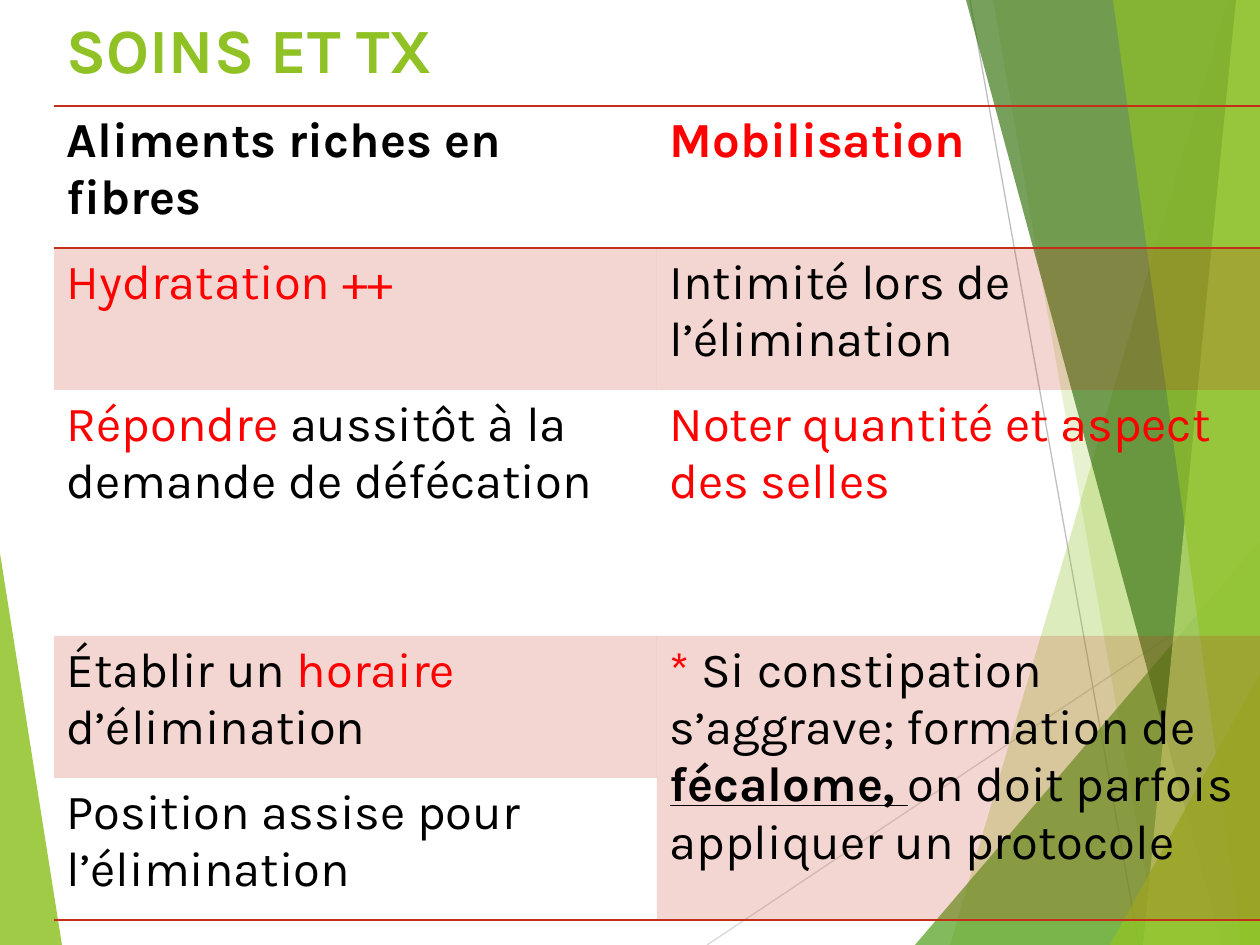
"""Build the constipation care slide: a title and a table over green facets."""
from pptx import Presentation
from pptx.dml.color import RGBColor
from pptx.enum.shapes import MSO_CONNECTOR
from pptx.enum.text import MSO_ANCHOR, MSO_AUTO_SIZE, PP_ALIGN
from pptx.oxml import parse_xml
from pptx.oxml.ns import nsdecls, qn
from pptx.util import Pt

PX = 914400 / 126
WIDTH, HEIGHT = 1260, 945
FONT = "Karla"
NO_STYLE = "{2D5ABB26-0587-4C30-8999-92F81FD0307C}"

BLACK = RGBColor(0x00, 0x00, 0x00)
RED = RGBColor(0xFF, 0x00, 0x00)
BRICK = RGBColor(0xC4, 0x2F, 0x1A)
LIME = RGBColor(0x90, 0xC2, 0x26)
GREEN = RGBColor(0x54, 0xA0, 0x21)
FOREST = RGBColor(0x3F, 0x78, 0x19)
PALE = RGBColor(0xC0, 0xE4, 0x74)
LIGHT_GREY = RGBColor(0xD9, 0xD9, 0xD9)
GREY = RGBColor(0xBF, 0xBF, 0xBF)

LEFT_FACET = ([(0, 553), (62, HEIGHT), (0, HEIGHT)], LIME, 85)
RAYS = [((707, HEIGHT), (WIDTH, 576), LIGHT_GREY), ((970, 0), (1139, HEIGHT), GREY)]
RIGHT_FACETS = [
    ([(1228, 0), (950, HEIGHT)], LIME, 30),
    ([(993, 0), (1158, HEIGHT)], LIME, 20),
    ([(WIDTH, 541), (915, HEIGHT)], GREEN, 72),
    ([(966, 0), (1222, HEIGHT)], FOREST, 70),
    ([(1236, 0), (1143, HEIGHT)], PALE, 70),
    ([(1113, 0), (1242, HEIGHT)], LIME, 65),
    ([(WIDTH, 674), (1110, HEIGHT)], LIME, 80),
]

TITLE = "SOINS ET TX"
TITLE_BOX = (54, 0, 446, 106)
TABLE_LEFT, TABLE_TOP = 54, 106
COLUMN_WIDTH = 603
ROW_HEIGHTS = [142, 142, 246, 142, 142]
ROWS = [
    [[("Aliments riches en fibres", BLACK, True)], [("Mobilisation", RED, True)]],
    [[("Hydratation ++", RED, False)], [("Intimité lors de l’élimination", BLACK, False)]],
    [[("Répondre", RED, False), (" aussitôt à la demande de défécation", BLACK, False)],
     [("Noter quantité et aspect des selles", RED, False)]],
    [[("Établir un", BLACK, False), (" horaire ", RED, False), ("d’élimination", BLACK, False)],
     [("*", RED, False), (" Si constipation s’aggrave; formation de ", BLACK, False),
      ("fécalome, ", BLACK, True), ("on doit parfois appliquer un protocole", BLACK, False)]],
    [[("Position assise pour l’élimination", BLACK, False)], []],
]
UNDERLINED = "fécalome, "
BORDERS = {0: ("lnB", "lnT"), 4: ("lnB",)}


def px(value):
    return round(value * PX)


def set_opacity(fill_element, percent):
    color = fill_element.find(".//" + qn("a:srgbClr"))
    color.append(parse_xml(f'<a:alpha {nsdecls("a")} val="{percent * 1000}"/>'))


def format_run(run, size, color, bold):
    run.font.name = FONT
    run.font.size = Pt(size)
    run.font.color.rgb = color
    run.font.bold = bold


def add_facet(slide, points, color, opacity):
    builder = slide.shapes.build_freeform(*points[0], scale=PX)
    builder.add_line_segments(points[1:], close=True)
    shape = builder.convert_to_shape()
    shape.shadow.inherit = False
    shape.line.fill.background()
    shape.fill.solid()
    shape.fill.fore_color.rgb = color
    set_opacity(shape._element.spPr, opacity)


def add_ray(slide, start, end, color):
    ends = [px(value) for value in (*start, *end)]
    connector = slide.shapes.add_connector(MSO_CONNECTOR.STRAIGHT, *ends)
    connector.line.color.rgb = color
    connector.line.width = Pt(0.75)
    connector._element.spPr.append(parse_xml(f'<a:effectLst {nsdecls("a")}/>'))


def add_background(slide):
    add_facet(slide, *LEFT_FACET)
    for ray in RAYS:
        add_ray(slide, *ray)
    for (top, bottom), color, opacity in RIGHT_FACETS:
        corner = [] if top[0] == WIDTH else [(WIDTH, 0)]
        add_facet(slide, [top, bottom, (WIDTH, HEIGHT), *corner], color, opacity)


def place_title(slide):
    title = slide.shapes.title
    title.left, title.top, title.width, title.height = map(px, TITLE_BOX)
    frame = title.text_frame
    frame.text = TITLE
    frame.auto_size = MSO_AUTO_SIZE.NONE
    frame.vertical_anchor = MSO_ANCHOR.MIDDLE
    paragraph = frame.paragraphs[0]
    paragraph.alignment = PP_ALIGN.LEFT
    paragraph.line_spacing = 0.9
    format_run(paragraph.runs[0], 36, LIME, True)
    slide.shapes._spTree.append(title._element)


def fill_cell(cell, pieces, row):
    paragraph = cell.text_frame.paragraphs[0]
    for text, color, bold in pieces:
        run = paragraph.add_run()
        run.text = text
        format_run(run, 28, color, bold)
        if text == UNDERLINED:
            run.font.underline = True
    properties = cell._tc.get_or_add_tcPr()
    if row % 2:
        cell.fill.solid()
        cell.fill.fore_color.rgb = BRICK
        set_opacity(properties, 20)
    else:
        cell.fill.background()
    for side in BORDERS.get(row, ()):
        properties.insert(0, parse_xml(
            f'<a:{side} {nsdecls("a")} w="12700"><a:solidFill>'
            f'<a:srgbClr val="{BRICK}"/></a:solidFill></a:{side}>'))


def add_care_table(slide):
    frame = slide.shapes.add_table(
        len(ROWS), 2, px(TABLE_LEFT), px(TABLE_TOP),
        px(2 * COLUMN_WIDTH), px(sum(ROW_HEIGHTS)))
    table = frame.table
    table.first_row = table.horz_banding = False
    table._tbl.tblPr.find(qn("a:tableStyleId")).text = NO_STYLE
    for column in table.columns:
        column.width = px(COLUMN_WIDTH)
    for index, (height, contents) in enumerate(zip(ROW_HEIGHTS, ROWS)):
        table.rows[index].height = px(height)
        for column, pieces in enumerate(contents):
            fill_cell(table.cell(index, column), pieces, index)
    protocol = table.cell(3, 1)
    protocol.merge(table.cell(4, 1))
    border = table.cell(4, 1)._tc.tcPr.find(qn("a:lnB"))
    protocol._tc.tcPr.insert(0, parse_xml(
        f'<a:lnB {nsdecls("a")} w="{border.get("w")}"><a:solidFill>'
        f'<a:srgbClr val="{BRICK}"/></a:solidFill></a:lnB>'))


def main():
    presentation = Presentation()
    presentation.slide_width, presentation.slide_height = px(WIDTH), px(HEIGHT)
    slide = presentation.slides.add_slide(presentation.slide_layouts[5])
    add_background(slide)
    place_title(slide)
    add_care_table(slide)
    presentation.save("out.pptx")


if __name__ == "__main__":
    main()
